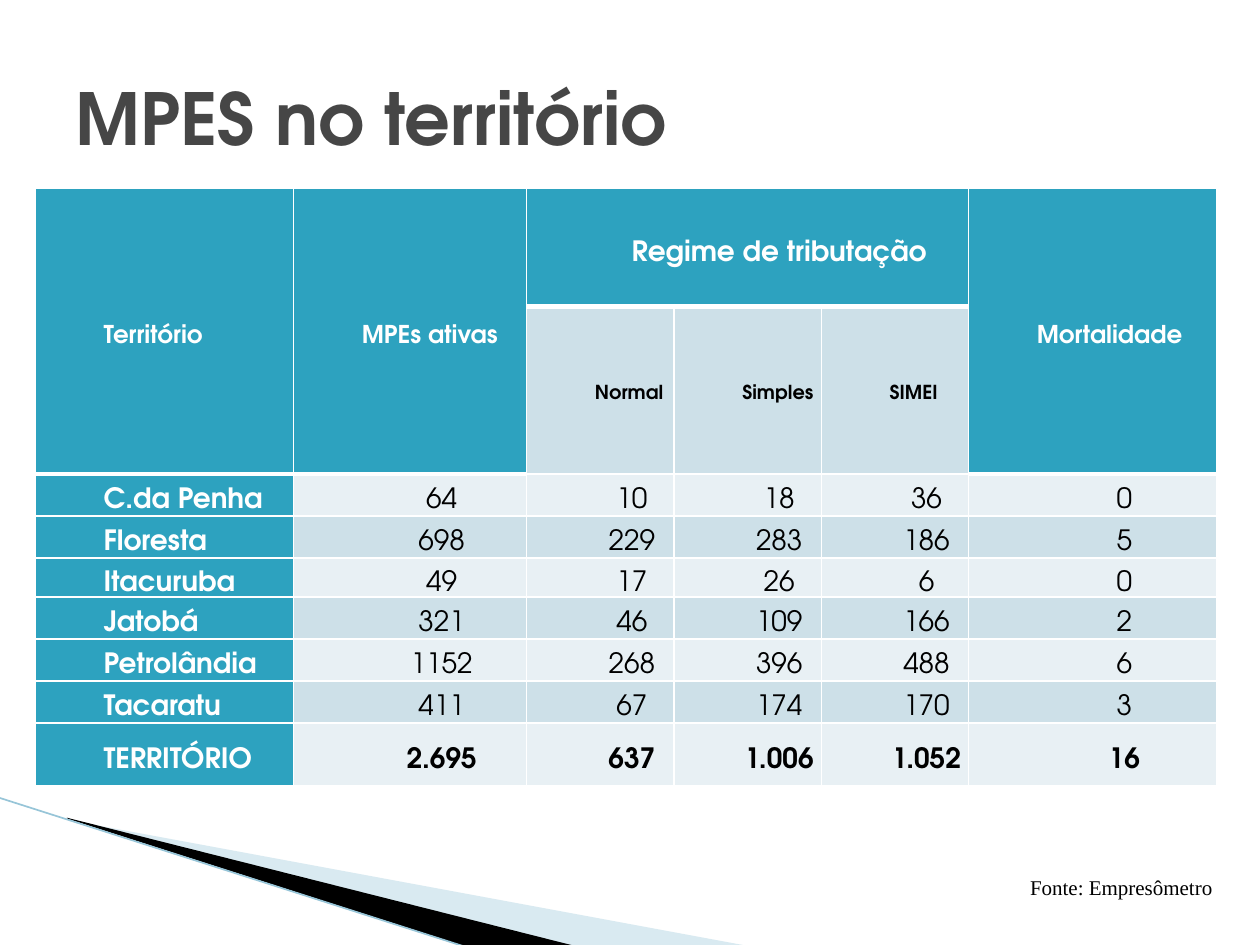
from typing import NamedTuple

from lxml import etree
from pptx import Presentation
from pptx import util as u
from pptx.dml.color import RGBColor
from pptx.enum import shapes, text
from pptx.oxml import ns

TEAL = RGBColor(0x2D, 0xA2, 0xBF)
PALE_TEAL = RGBColor(0xA0, 0xCB, 0xDC)
LINE_TEAL = RGBColor(0x97, 0xC5, 0xD8)
BAND_DARK = RGBColor(0xCD, 0xE0, 0xE8)
BAND_LIGHT = RGBColor(0xE8, 0xF0, 0xF4)
WHITE = RGBColor(0xFF, 0xFF, 0xFF)
BLACK = RGBColor(0, 0, 0)
GREY = RGBColor(0x46, 0x46, 0x46)
FONT = "TeX Gyre Adventor"
SOURCE_FONT = "Times New Roman"
LEFT, CENTER, JUSTIFY = text.PP_ALIGN.LEFT, text.PP_ALIGN.CENTER, text.PP_ALIGN.JUSTIFY


class Wedge(NamedTuple):
    points: list[tuple[float, float]]
    color: RGBColor
    opacity: int = 100


class CellStyle(NamedTuple):
    fill: RGBColor
    color: RGBColor
    size: float = 16
    bold: bool = True
    align: text.PP_ALIGN = LEFT


WEDGES = [
    Wedge([(39.6, 468.7), (428.4, 540.7), (328.3, 540.7), (39.6, 468)], PALE_TEAL, 40),
    Wedge([(38.2, 467.3), (329, 540.7), (267.8, 541.4), (38.9, 468)], BLACK),
]

COLUMN_WIDTHS = [147.6, 133.2, 84.2, 84.2, 84.2, 141.8]
ROW_HEIGHTS = [67.5, 95.8, 24, 24, 12, 24, 24, 24, 36]
ROWS = [
    ["Território", "MPEs ativas", "Regime de tributação", "", "", "Mortalidade"],
    ["", "", "Normal", "Simples", "SIMEI", ""],
    ["C.da Penha", "64", "10", "18", "36", "0"],
    ["Floresta", "698", "229", "283", "186", "5"],
    ["Itacuruba", "49", "17", "26", "6", "0"],
    ["Jatobá", "321", "46", "109", "166", "2"],
    ["Petrolândia", "1152", "268", "396", "488", "6"],
    ["Tacaratu", "411", "67", "174", "170", "3"],
    ["TERRITÓRIO", "2.695", "637", "1.006", "1.052", "16"],
]
MERGES = [((0, 0), (1, 0)), ((0, 1), (1, 1)), ((0, 2), (0, 4)), ((0, 5), (1, 5))]
TOTAL_ROW = len(ROWS) - 1


def is_header(row: int, column: int) -> bool:
    return row == 0 or (row == 1 and column in (0, 1, 5))


def style_for(row: int, column: int) -> CellStyle:
    if is_header(row, column):
        if column == 2:
            return CellStyle(TEAL, WHITE, align=CENTER)
        return CellStyle(TEAL, WHITE, 14)
    if row == 1:
        return CellStyle(BAND_DARK, BLACK, 11)
    if column == 0:
        return CellStyle(TEAL, WHITE, align=JUSTIFY if row == TOTAL_ROW else LEFT)
    band = BAND_DARK if row % 2 else BAND_LIGHT
    return CellStyle(band, BLACK, bold=row == TOTAL_ROW, align=CENTER)


def set_font(paragraph, name: str, size: float, color: RGBColor, bold: bool) -> None:
    font = paragraph.font
    font.name, font.size, font.bold = name, u.Pt(size), bold
    font.color.rgb = color


def add_border(cell, side: str, width: float) -> None:
    properties = cell._tc.get_or_add_tcPr()
    line = etree.SubElement(properties, ns.qn(f"a:ln{side}"), w=str(u.Pt(width)))
    fill = etree.SubElement(line, ns.qn("a:solidFill"))
    etree.SubElement(fill, ns.qn("a:srgbClr"), val=str(WHITE))


def format_cell(cell, row: int, column: int) -> None:
    style = style_for(row, column)
    header = is_header(row, column)
    below_header = not header and is_header(row - 1, column)
    for side, width in (("L", 1), ("R", 1), ("T", 3 if below_header else 1),
                        ("B", 3 if header else 1)):
        add_border(cell, side, width)
    cell.fill.solid()
    cell.fill.fore_color.rgb = style.fill
    cell.margin_left = cell.margin_right = u.Pt(3)
    cell.margin_top = cell.margin_bottom = 0
    cell.vertical_anchor = text.MSO_ANCHOR.MIDDLE
    paragraph = cell.text_frame.paragraphs[0]
    if ROWS[row][column]:
        paragraph.text = ROWS[row][column]
    paragraph.alignment = style.align
    paragraph.line_spacing = 1.5
    paragraph_properties = paragraph._p.get_or_add_pPr()
    paragraph_properties.set("marL", str(u.Pt(36)))
    paragraph_properties.set("indent", "0")
    set_font(paragraph, FONT, style.size, style.color, style.bold)


def add_wedge(slide, wedge: Wedge) -> None:
    points = [(u.Pt(x), u.Pt(y)) for x, y in wedge.points]
    builder = slide.shapes.build_freeform(*points[0])
    builder.add_line_segments(points[1:], close=True)
    shape = builder.convert_to_shape()
    shape.shadow.inherit = False
    shape.line.fill.background()
    shape.fill.solid()
    shape.fill.fore_color.rgb = wedge.color
    if wedge.opacity < 100:
        color = shape._element.spPr.find(f".//{ns.qn('a:srgbClr')}")
        etree.SubElement(color, ns.qn("a:alpha"), val=str(wedge.opacity * 1000))


def add_edge_line(slide) -> None:
    line = slide.shapes.add_connector(
        shapes.MSO_CONNECTOR.STRAIGHT, u.Pt(-0.7), u.Pt(455.8), u.Pt(267.1), u.Pt(541.4))
    line.line.color.rgb = LINE_TEAL
    line.line.width = u.Pt(0.95)
    etree.SubElement(line._element.spPr, ns.qn("a:effectLst"))


def add_title(slide) -> None:
    title = slide.shapes.title
    title.left, title.top, title.width, title.height = map(u.Pt, (36, 21.6, 648, 90))
    frame = title.text_frame
    frame.text = "MPES no território"
    frame.vertical_anchor = text.MSO_ANCHOR.MIDDLE
    frame.auto_size = text.MSO_AUTO_SIZE.NONE
    paragraph = frame.paragraphs[0]
    paragraph.alignment = LEFT
    set_font(paragraph, FONT, 41, GREY, True)


def add_companies_table(slide) -> None:
    table = slide.shapes.add_table(
        len(ROWS), len(COLUMN_WIDTHS), u.Pt(20.2), u.Pt(107.5),
        u.Pt(sum(COLUMN_WIDTHS)), u.Pt(sum(ROW_HEIGHTS))).table
    for column, width in zip(table.columns, COLUMN_WIDTHS):
        column.width = u.Pt(width)
    for row, height in zip(table.rows, ROW_HEIGHTS):
        row.height = u.Pt(height)
    for row, values in enumerate(ROWS):
        for column in range(len(values)):
            format_cell(table.cell(row, column), row, column)
    for first, last in MERGES:
        table.cell(*first).merge(table.cell(*last))


def add_source(slide) -> None:
    box = slide.shapes.add_textbox(u.Pt(280.8), u.Pt(488.9), u.Pt(720), u.Pt(36))
    frame = box.text_frame
    frame.word_wrap = False
    frame.auto_size = text.MSO_AUTO_SIZE.SHAPE_TO_FIT_TEXT
    frame.vertical_anchor = text.MSO_ANCHOR.MIDDLE
    paragraph = frame.paragraphs[0]
    paragraph.text = "Fonte: Empresômetro"
    paragraph.alignment = CENTER
    set_font(paragraph, SOURCE_FONT, 12, BLACK, False)


def main() -> None:
    presentation = Presentation()
    presentation.slide_width, presentation.slide_height = u.Pt(720), u.Pt(540)
    slide = presentation.slides.add_slide(presentation.slide_layouts[5])

    # Corner decoration
    for wedge in WEDGES:
        add_wedge(slide, wedge)
    add_edge_line(slide)

    # Content
    add_title(slide)
    add_companies_table(slide)
    add_source(slide)
    presentation.save("out.pptx")


if __name__ == "__main__":
    main()
